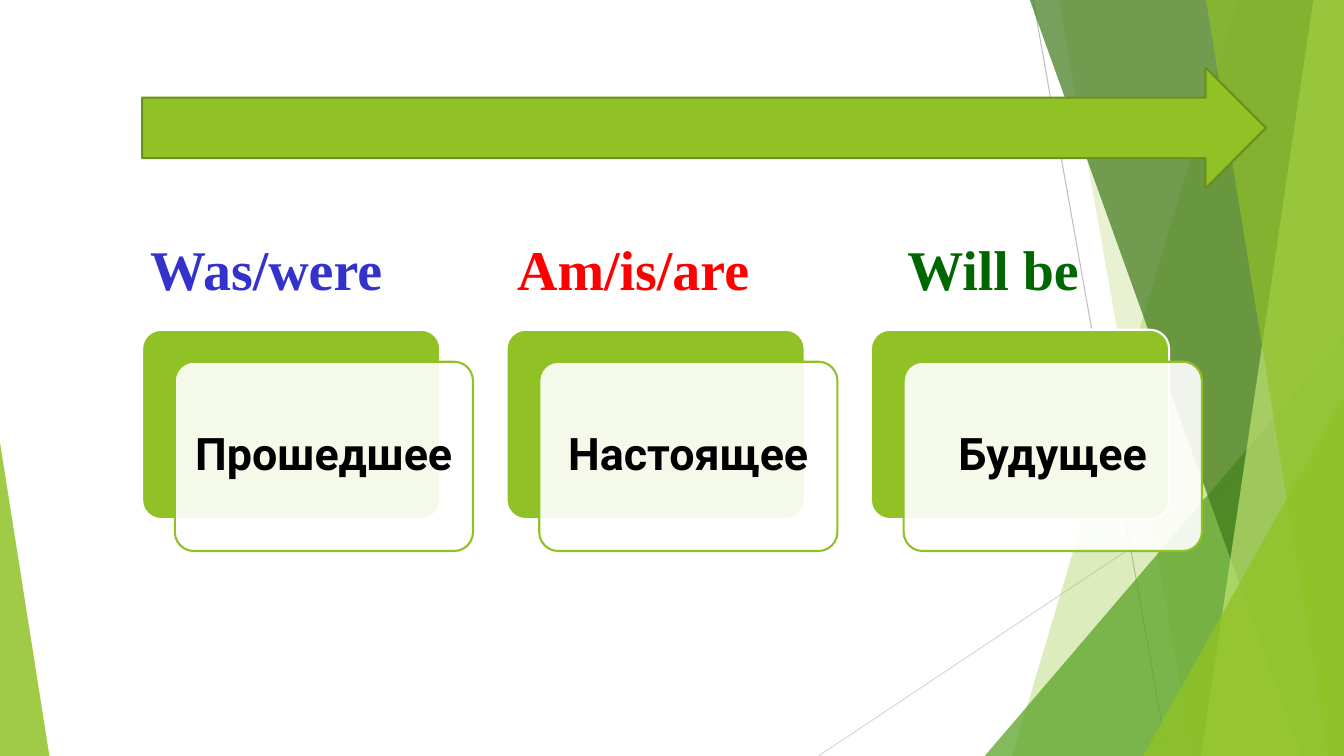
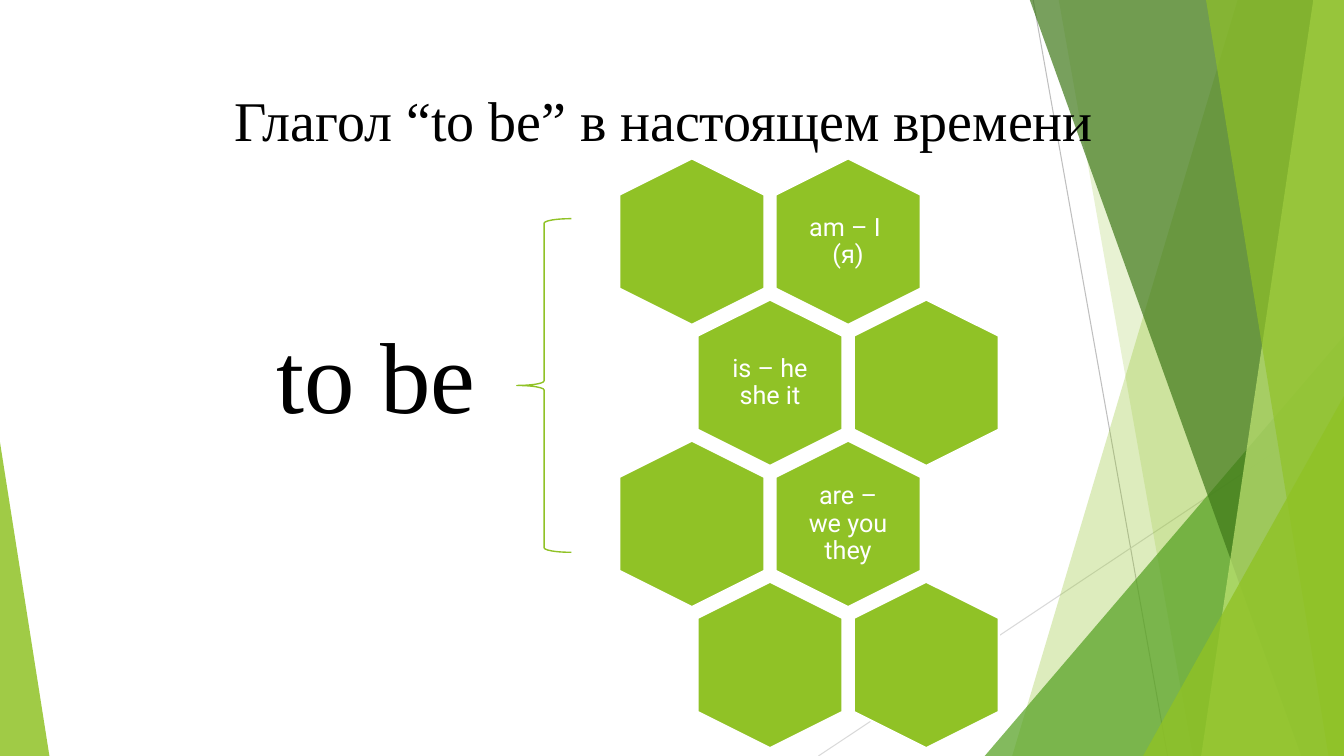
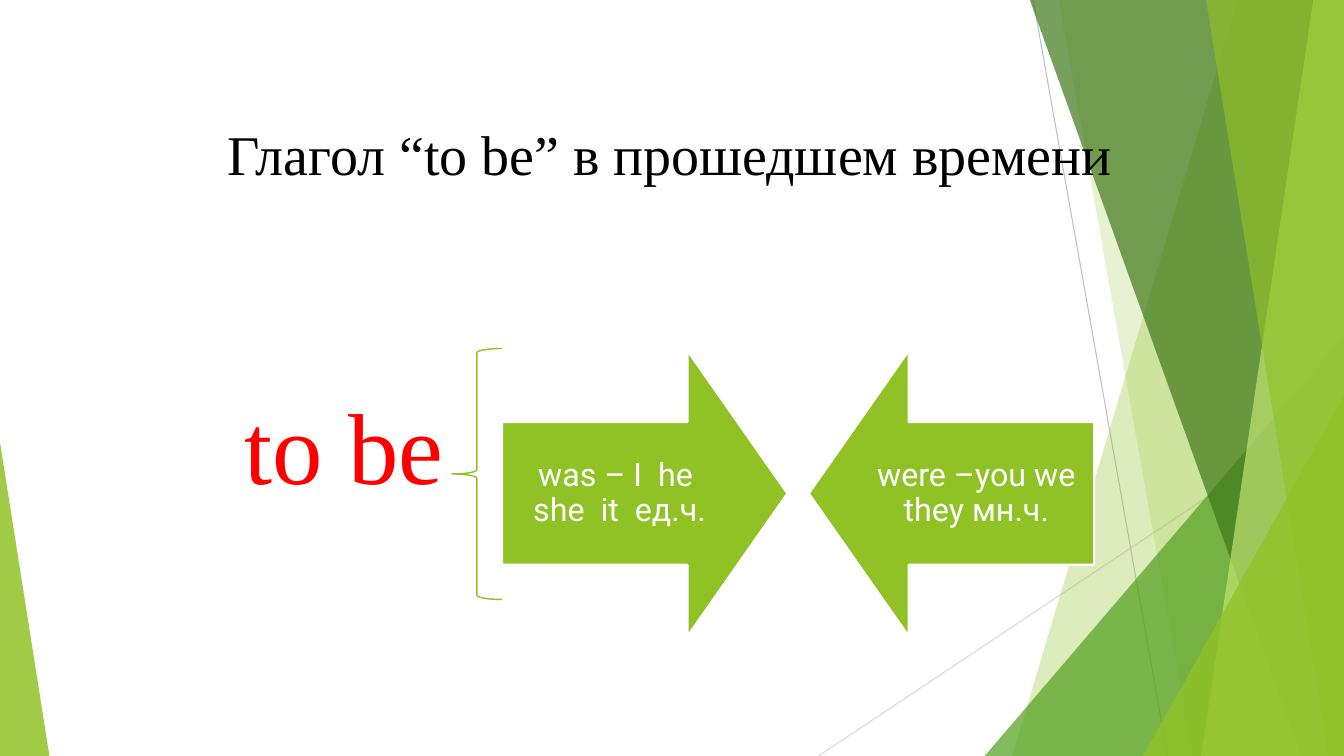
from lxml import etree
from pptx import Presentation
from pptx.dml.color import RGBColor
from pptx.enum.shapes import MSO_CONNECTOR, MSO_SHAPE
from pptx.enum.text import MSO_ANCHOR, PP_ALIGN
from pptx.oxml.ns import qn
from pptx.util import Pt

HEXAGON = MSO_SHAPE.HEXAGON
TRIANGLE = MSO_SHAPE.ISOSCELES_TRIANGLE
ROUND = MSO_SHAPE.ROUNDED_RECTANGLE
BRACE = MSO_SHAPE.LEFT_BRACE
RIGHT = MSO_SHAPE.RIGHT_ARROW
LEFT = MSO_SHAPE.LEFT_ARROW
LINE = MSO_CONNECTOR.STRAIGHT
CENTER = PP_ALIGN.CENTER
MIDDLE = MSO_ANCHOR.MIDDLE

WIDE, HIGH = 960, 540
SANS, SERIF = "Roboto", "Times New Roman"
COLORS = {
    "lime": "90C226", "green": "54A021", "forest": "3F7819",
    "pale": "C0E474", "olive": "6B901C", "gray": "BFBFBF",
    "silver": "D9D9D9", "white": "FFFFFF", "black": "000000",
    "blue": "3333CC", "red": "FF0000", "dark": "006600",
}


def color(name):
    return RGBColor.from_string(COLORS[name])


def paint(shape, fill=None, alpha=100, line=None, width=1.5):
    shape.shadow.inherit = False
    if fill:
        shape.fill.solid()
        shape.fill.fore_color.rgb = color(fill)
        if alpha < 100:
            tone = shape._element.spPr.find(qn("a:solidFill"))[0]
            etree.SubElement(tone, qn("a:alpha")).set("val", str(alpha * 1000))
    else:
        shape.fill.background()
    if line:
        shape.line.color.rgb = color(line)
        shape.line.width = Pt(width)
    else:
        shape.line.fill.background()


def add_form(slide, kind, box, adjust=(), **style):
    shape = slide.shapes.add_shape(kind, *map(Pt, box))
    for i, value in enumerate(adjust):
        shape.adjustments[i] = value
    paint(shape, **style)
    return shape


def add_rule(slide, start, end, tone):
    rule = slide.shapes.add_connector(LINE, *map(Pt, start + end))
    rule.line.color.rgb = color(tone)
    rule.line.width = Pt(0.75)
    etree.SubElement(rule._element.spPr, qn("a:effectLst"))


def add_band(slide, top, bottom, fill, alpha):
    points = [(WIDE, -0.6), (WIDE, HIGH), (bottom, HIGH)]
    band = slide.shapes.build_freeform(Pt(top), Pt(-0.6))
    band.add_line_segments([(Pt(x), Pt(y)) for x, y in points])
    paint(band.convert_to_shape(), fill, alpha)


def write(shape, text, size, tone, font=SERIF, bold=False, align=None):
    frame = shape.text_frame
    frame.word_wrap = True
    frame.text = text
    line = frame.paragraphs[0]
    line.alignment = align
    face = line.runs[0].font
    face.name, face.size, face.bold = font, Pt(size), bold
    face.color.rgb = color(tone)


def write_label(shape, text, size, inset, tone="white", bold=False):
    write(shape, text, size, tone, SANS, bold, CENTER)
    frame = shape.text_frame
    frame.vertical_anchor = MIDDLE
    frame.margin_left = frame.margin_right = Pt(inset)
    frame.margin_top = frame.margin_bottom = Pt(inset)
    frame.paragraphs[0].line_spacing = 0.9


def add_text(slide, box, text, size, tone="black", **style):
    area = slide.shapes.add_textbox(*map(Pt, box))
    write(area, text, size, tone, **style)


def add_page(deck):
    slide = deck.slides.add_slide(deck.slide_layouts[6])
    add_rule(slide, (738, 0), (834, HIGH), "gray")
    add_rule(slide, (WIDE, 290), (584.6, HIGH), "silver")
    add_band(slide, 884.2, 723, "lime", 30)
    add_band(slide, 756.2, 852, "lime", 20)
    add_form(slide, TRIANGLE, (703.4, 240, 256.6, 300), [1],
             fill="green", alpha=72)
    add_band(slide, 735.4, 929.5, "forest", 70)
    add_band(slide, 938.2, 858, "pale", 70)
    add_band(slide, 861.4, 949, "lime", 65)
    add_form(slide, TRIANGLE, (816.5, 283, 143.5, 257), [1],
             fill="lime", alpha=80)
    add_form(slide, TRIANGLE, (0, 316, 35.3, 224), [0],
             fill="lime", alpha=85)
    return slide


def add_card(slide, left, text):
    top, shift, size = 235.6, 22.8, (213, 135.2)
    add_form(slide, ROUND, (left, top, *size), [0.1],
             fill="lime", line="white")
    panel = add_form(slide, ROUND,
                     (left + 23.4, top + shift, *size), [0.1],
                     fill="white", alpha=90, line="lime")
    write_label(panel, text, 32, 8, "black", True)


def add_cell(slide, row, col, text):
    wide, high = 118.8, 103.6
    x = 494.2 + 111.6 * (col + row % 2 / 2)
    y = 172.6 + 100.8 * row
    cell = add_form(slide, HEXAGON, (x - wide / 2, y - high / 2, wide, high),
                    [0.25], fill="lime", line="white")
    cell.rotation = 90
    if text:
        area = slide.shapes.add_textbox(
            Pt(x - 35.6), Pt(y - 41), Pt(71.2), Pt(82))
        write_label(area, text, 18, 5)


def add_brace(slide, box):
    add_form(slide, BRACE, box, line="lime", width=1)


def add_arrow(slide, kind, left, text):
    arrow = add_form(slide, kind, (left, 250.6, 203.8, 203.8), [0.5, 0.35],
                     fill="lime", line="white")
    write_label(arrow, text, 23, 13)


def add_tenses(deck):
    slide = add_page(deck)
    add_form(slide, RIGHT, (101.5, 48.2, 802.8, 86.4),
             fill="lime", line="olive")
    tenses = [("Was/were", "blue", "Прошедшее"),
              ("Am/is/are", "red", "Настоящее"),
              ("Will be ", "dark", "Будущее")]
    for i, (verb, tone, tense) in enumerate(tenses):
        add_text(slide, (59.2 + 262.1 * i, 164.2, 262, 56), verb, 40, tone,
                 bold=True, align=CENTER)
        add_card(slide, 101.5 + 260.3 * i, tense)


def add_present(deck):
    slide = add_page(deck)
    add_text(slide, (160.6, 57.6, 767.5, 55.4),
             "Глагол “to be” в настоящем времени", 40)
    add_text(slide, (190.4, 220, 198, 94.3), "to be", 72)
    add_brace(slide, (369.2, 156.2, 38.9, 238.3))
    rows = [("", "am – I  (я)"), ("is – he she it", ""),
            ("", "are – we you they"), ("", "")]
    for row, texts in enumerate(rows):
        for col, text in enumerate(texts):
            add_cell(slide, row, col, text)


def add_past(deck):
    slide = add_page(deck)
    add_text(slide, (155.6, 82, 693.4, 55.4),
             "Глагол “to be” в прошедшем времени", 40)
    add_text(slide, (167.8, 270.4, 223.9, 94.3), "to be", 72, "red")
    add_brace(slide, (322.6, 249, 36, 179.2))
    add_arrow(slide, RIGHT, 358.6, "was – I  he  she  it  ед.ч.")
    add_arrow(slide, LEFT, 577.8, "were –you we they мн.ч.")


def main():
    deck = Presentation()
    deck.slide_width, deck.slide_height = Pt(WIDE), Pt(HIGH)
    add_tenses(deck)
    add_present(deck)
    add_past(deck)
    deck.save("out.pptx")


if __name__ == "__main__":
    main()
